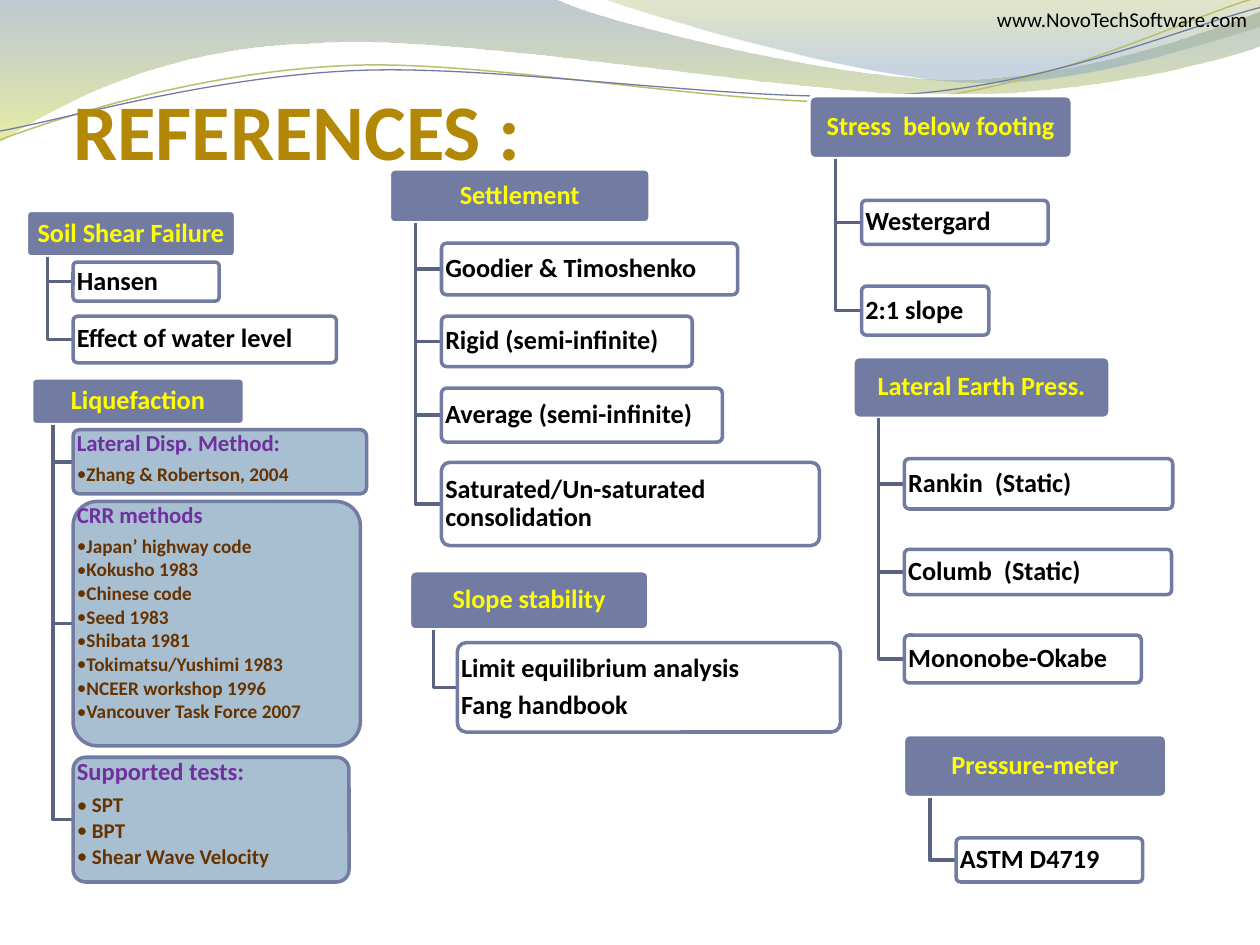
from dataclasses import dataclass

from pptx import Presentation
from pptx.dml.color import RGBColor
from pptx.enum.shapes import MSO_SHAPE
from pptx.enum.text import MSO_ANCHOR, MSO_AUTO_SIZE, PP_ALIGN
from pptx.oxml.ns import qn
from pptx.util import Inches, Pt
from lxml.etree import SubElement


@dataclass(frozen=True)
class Theme:
    font: str = "Calibri"
    title: str = "B38807"
    header: str = "727CA3"
    header_text: str = "FFFF00"
    branch: str = "5B6383"
    paper: str = "FFFFFF"
    ink: str = "000000"
    note: str = "9FB8CD"
    note_heading: str = "7030A0"
    note_text: str = "663300"
    green_line: str = "B9C06C"
    wave_stops: tuple = ((0, "72889B", 45), (1, "D3DE57", 55))
    crest_stops: tuple = ((0, "A4AC50", 30), (0.8, "84A3BD", 45))
    title_size: float = 45
    label_size: float = 15
    address_size: float = 12
    border: float = 2
    corner: float = 0.1


@dataclass(frozen=True)
class Item:
    top: float
    width: float
    height: float
    lines: tuple
    bullets: tuple = ()
    heading_size: float = 13
    bullet_size: float = 11
    indent: float = 0.06


def set_opacity(shape, *percents):
    """Apply one opacity to each fill colour; call before the line is set."""
    for color, percent in zip(shape._element.spPr.iter(qn("a:srgbClr")), percents):
        SubElement(color, qn("a:alpha")).set("val", str(percent * 1000))


def set_margins(frame, horizontal, vertical):
    frame.margin_left = frame.margin_right = Inches(horizontal)
    frame.margin_top = frame.margin_bottom = Inches(vertical)


def add_text(frame, text, *, size, color, bold=True, align=PP_ALIGN.LEFT,
             line_spacing=None, after=0, indent=None):
    """Add a paragraph, reusing the first one while the frame is empty."""
    paragraph = frame.add_paragraph() if frame.text else frame.paragraphs[0]
    if indent:
        paragraph.level = 1
        properties = paragraph._p.get_or_add_pPr()
        properties.set("marL", str(Inches(indent)))
        properties.set("indent", str(-Inches(indent)))
        SubElement(properties, qn("a:buFont")).set("typeface", Theme.font)
        SubElement(properties, qn("a:buChar")).set("char", "•")
    paragraph.alignment = align
    paragraph.line_spacing = line_spacing
    paragraph.space_after = Pt(size * after)
    run = paragraph.add_run()
    run.text = text
    run.font.name = Theme.font
    run.font.size = Pt(size)
    run.font.bold = bold
    run.font.color.rgb = RGBColor.from_string(color)


class SlideBuilder:
    def __init__(self, slide, theme):
        self.slide = slide
        self.theme = theme

    def outline(self, start, *segments, closed=False):
        """Draw straight segments (two numbers) and cubic curves (six numbers)."""
        builder = self.slide.shapes.build_freeform(*map(Inches, start))
        builder.add_line_segments([tuple(map(Inches, segment[-2:])) for segment in segments],
                                  close=closed)
        shape = builder.convert_to_shape()
        shape.shadow.inherit = False
        for segment, element in zip(segments, list(shape._element.iter(qn("a:lnTo")))):
            if len(segment) == 6:
                element.tag = qn("a:cubicBezTo")
                element.clear()
                for x, y in zip(segment[::2], segment[1::2]):
                    point = SubElement(element, qn("a:pt"))
                    point.set("x", str(Inches(x) - shape.left))
                    point.set("y", str(Inches(y) - shape.top))
        return shape

    def path_line(self, *points, color, width):
        shape = self.outline(*points)
        shape.fill.background()
        shape.line.color.rgb = RGBColor.from_string(color)
        shape.line.width = Pt(width)

    def gradient_area(self, *points, stops):
        shape = self.outline(*points, closed=True)
        shape.fill.gradient()
        shape.fill.gradient_angle = 270
        for stop, (position, color, _) in zip(shape.fill.gradient_stops, stops):
            stop.position = position
            stop.color.rgb = RGBColor.from_string(color)
        set_opacity(shape, *(percent for _, _, percent in stops))
        shape.line.fill.background()

    def title(self, text, left, top, width, height):
        shape = self.slide.shapes.title
        self.slide.shapes._spTree.append(shape._element)
        shape.left, shape.top = Inches(left), Inches(top)
        shape.width, shape.height = Inches(width), Inches(height)
        frame = shape.text_frame
        frame.auto_size = MSO_AUTO_SIZE.NONE
        frame.vertical_anchor = MSO_ANCHOR.BOTTOM
        frame.margin_left = frame.margin_right = frame.margin_bottom = 0
        add_text(frame, text, size=self.theme.title_size, color=self.theme.title)

    def text_box(self, bounds):
        frame = self.slide.shapes.add_textbox(*map(Inches, bounds)).text_frame
        frame.word_wrap = True
        return frame

    def address(self, text, *bounds):
        add_text(self.text_box(bounds), text, size=self.theme.address_size,
                 color=self.theme.ink, bold=False, align=PP_ALIGN.RIGHT)

    def rounded_box(self, bounds, fill, line, opacity=100):
        shape = self.slide.shapes.add_shape(MSO_SHAPE.ROUNDED_RECTANGLE, *map(Inches, bounds))
        shape.adjustments[0] = self.theme.corner
        shape.shadow.inherit = False
        shape.fill.solid()
        shape.fill.fore_color.rgb = RGBColor.from_string(fill)
        if opacity < 100:
            set_opacity(shape, opacity)
        shape.line.color.rgb = RGBColor.from_string(line)
        shape.line.width = Pt(self.theme.border)
        frame = shape.text_frame
        frame.word_wrap = True
        frame.vertical_anchor = MSO_ANCHOR.MIDDLE
        # Rounded corners already push the text in by 0.29 of their radius.
        corner_inset = 0.29 * self.theme.corner * min(bounds[2:])
        set_margins(frame, max(0, 0.03 - corner_inset), max(0, 0.02 - corner_inset))
        return frame

    def item_box(self, left, item):
        theme = self.theme
        bounds = (left, item.top, item.width, item.height)
        fill, color, size = theme.paper, theme.ink, theme.label_size
        if item.bullets:
            fill, color, size = theme.note, theme.note_heading, item.heading_size
        frame = self.rounded_box(bounds, fill, theme.header, 90)
        if item.bullets:
            # Notes start closer to the edge than the rounded corners allow.
            frame = self.text_box(bounds)
            set_margins(frame, 0.03, 0.02)
        for line in item.lines:
            add_text(frame, line, size=size, color=color, line_spacing=0.9, after=0.35)
        for bullet in item.bullets:
            add_text(frame, bullet, size=item.bullet_size, color=theme.note_text,
                     line_spacing=0.9, after=0.15, indent=item.indent)

    def hierarchy(self, heading, bounds, items, item_left=None):
        """Draw a header with its items hanging from a trunk at a tenth of its width."""
        left, top, width, height = bounds
        theme = self.theme
        frame = self.rounded_box(bounds, theme.header, theme.paper)
        add_text(frame, heading, size=theme.label_size, color=theme.header_text,
                 align=PP_ALIGN.CENTER, line_spacing=0.9)
        trunk, bottom = left + width / 10, top + height
        item_left = item_left or left + width / 5
        for item in items:
            middle = item.top + item.height / 2
            self.path_line((trunk, bottom), (trunk, middle), (item_left, middle),
                           color=theme.branch, width=theme.border)
            self.item_box(item_left, item)

    def waves(self):
        theme = self.theme
        self.gradient_area(
            (0, 0), (4.4, -0.01), (4.76, 0.17, 6.64, 0.63, 7.58, 0.63),
            (8.53, 0.63, 9.58, 0.26, 10, 0.09), (10.01, 0.36),
            (9.83, 0.44, 8.7, 0.76, 7.46, 0.75), (6.22, 0.75, 3.82, 0.28, 2.57, 0.34),
            (1.29, 0.36, 0.46, 0.83, -0.01, 1.13), stops=theme.wave_stops)
        self.gradient_area(
            (4.79, -0.01), (5.09, 0.11, 6.82, 0.62, 7.69, 0.65),
            (8.56, 0.69, 9.61, 0.32, 10, 0.21), (10, 0), stops=theme.crest_stops)
        self.path_line(
            (0, 1.11), (0.48, 0.93, 1.58, 0.57, 2.77, 0.52), (3.95, 0.47, 5.93, 0.89, 7.13, 0.8),
            (8.33, 0.71, 9.38, 0.15, 9.98, -0.02), color=theme.green_line, width=0.85)
        self.path_line(
            (0, 1.04), (0.47, 0.96, 1.64, 0.61, 2.83, 0.56), (4.03, 0.51, 5.97, 0.84, 7.17, 0.75),
            (8.36, 0.67, 9.41, 0.21, 10, 0.06), color=theme.header, width=0.75)


def main():
    presentation = Presentation()
    presentation.slide_width, presentation.slide_height = Inches(10), Inches(7.5)
    slide = presentation.slides.add_slide(presentation.slide_layouts[5])
    builder = SlideBuilder(slide, Theme())
    builder.waves()
    builder.title("REFERENCES :", 0.58, 0.75, 9, 0.65)
    builder.hierarchy("Soil Shear Failure", (0.21, 1.67, 1.66, 0.37), [
        Item(2.08, 1.16, 0.31, ("Hansen",)),
        Item(2.51, 2.09, 0.37, ("Effect of water level",))], item_left=0.58)
    builder.hierarchy("Settlement", (3.09, 1.34, 2.07, 0.43), [
        Item(1.93, 2.35, 0.41, ("Goodier & Timoshenko",)),
        Item(2.51, 1.99, 0.4, ("Rigid (semi-infinite)",)),
        Item(3.08, 2.23, 0.43, ("Average (semi-infinite)",)),
        Item(3.67, 3, 0.66, ("Saturated/Un-saturated consolidation",))])
    builder.hierarchy("Stress  below footing", (6.42, 0.76, 2.09, 0.5), [
        Item(1.59, 1.48, 0.35, ("Westergard",)),
        Item(2.27, 1.01, 0.39, ("2:1 slope",))])
    builder.hierarchy("Lateral Earth Press.", (6.77, 2.83, 2.04, 0.49), [
        Item(3.64, 2.13, 0.4, ("Rankin  (Static)",)),
        Item(4.36, 2.12, 0.36, ("Columb  (Static)",)),
        Item(5.04, 1.88, 0.38, ("Mononobe-Okabe",))])
    builder.hierarchy("Liquefaction", (0.25, 3, 1.69, 0.37), [
        Item(3.41, 2.33, 0.51, ("Lateral Disp. Method:",), ("Zhang & Robertson, 2004",)),
        Item(3.98, 2.28, 1.94, ("CRR methods",), (
            "Japan’ highway code", "Kokusho 1983", "Chinese code", "Seed 1983", "Shibata 1981",
            "Tokimatsu/Yushimi 1983", "NCEER workshop 1996", "Vancouver Task Force 2007")),
        Item(6.01, 2.19, 0.99, ("Supported tests:",), ("SPT", "BPT", "Shear Wave Velocity"),
             heading_size=14, bullet_size=12, indent=0.12)], item_left=0.58)
    builder.hierarchy("Pressure-meter", (7.17, 5.83, 2.09, 0.5), [
        Item(6.65, 1.48, 0.35, ("ASTM D4719",))])
    builder.hierarchy("Slope stability", (3.25, 4.53, 1.9, 0.47), [
        Item(5.1, 3.04, 0.71, ("Limit equilibrium analysis", "Fang handbook"))])
    builder.address("www.NovoTechSoftware.com", 6.83, 0, 3.17, 0.3)
    presentation.save("out.pptx")


if __name__ == "__main__":
    main()
